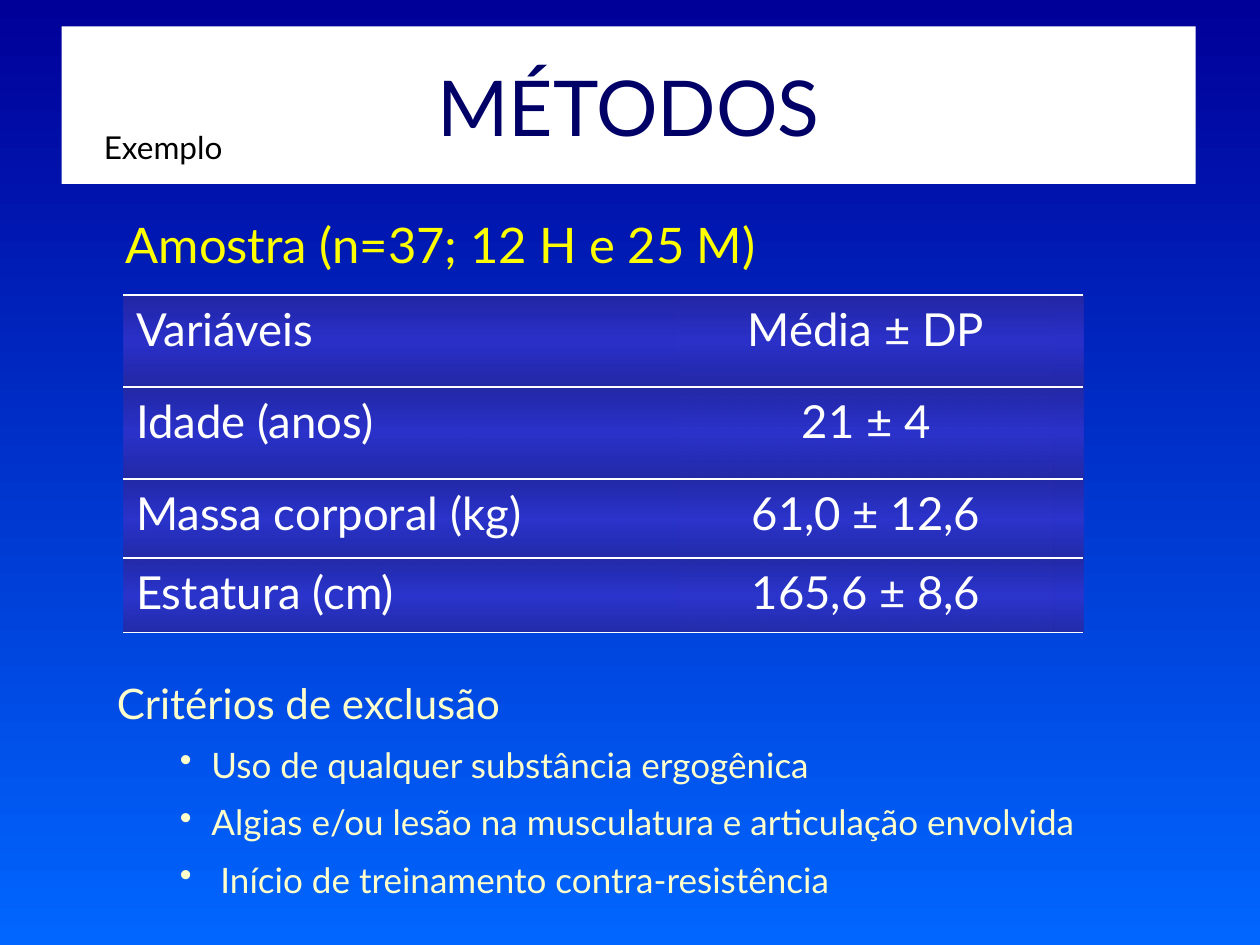
from lxml import etree
from pptx import Presentation
from pptx.dml.color import RGBColor
from pptx.enum.shapes import MSO_SHAPE
from pptx.enum.text import MSO_ANCHOR, PP_ALIGN
from pptx.oxml import parse_xml
from pptx.oxml.ns import nsdecls, qn
from pptx.util import Inches, Pt

RECTANGLE = MSO_SHAPE.RECTANGLE
TOP, MIDDLE = MSO_ANCHOR.TOP, MSO_ANCHOR.MIDDLE
LEFT, CENTER = PP_ALIGN.LEFT, PP_ALIGN.CENTER
FONT = "Lato"
COLORS = {
    "sky_top": "000099", "sky_bottom": "0066FF", "white": "FFFFFF",
    "navy": "000066", "yellow": "FFFF00", "cream": "FFFFCC",
    "black": "000000", "cell_edge": "2828A0", "cell_middle": "3333CC",
}
CELL_STOPS = [(0, "cell_edge", 86), (50, "cell_middle", 84), (100, "cell_edge", 86)]
COLUMN_WIDTHS = [4.41, 2.97, 0.23]
ROW_HEIGHTS = [0.73, 0.73, 0.63, 0.59]
SAMPLE = [
    ("Variáveis", "Média ± DP"),
    ("Idade (anos)", "21 ± 4"),
    ("Massa corporal (kg)", "61,0 ± 12,6"),
    ("Estatura (cm)", "165,6 ± 8,6"),
]
EXCLUSIONS = [
    "Uso de qualquer substância ergogênica",
    "Algias e/ou lesão na musculatura e articulação envolvida",
    " Início de treinamento contra-resistência",
]


def rgb(name):
    return RGBColor.from_string(COLORS[name])


def write(paragraph, text, size, color, align=LEFT, space=0, line_spacing=1.0):
    """Fill a paragraph; space is the gap before it as a share of the text size."""
    paragraph.text = text
    paragraph.font.name = FONT
    paragraph.font.size = Pt(size)
    paragraph.font.color.rgb = rgb(color)
    paragraph.alignment = align
    paragraph.space_before = Pt(size * space)
    paragraph.line_spacing = line_spacing


def indent(paragraph, margin, hanging, bullet=None):
    properties = paragraph._p.get_or_add_pPr()
    properties.set("marL", str(Inches(margin)))
    properties.set("indent", str(-Inches(hanging)))
    if bullet:
        etree.SubElement(properties, qn("a:buChar")).set("char", bullet)
        # Bullets must precede the default run properties
        defaults = properties.find(qn("a:defRPr"))
        if defaults is not None:
            properties.append(defaults)


def paint_background(slide):
    fill = slide.background.fill
    fill.gradient()
    fill.gradient_angle = 270
    for stop, name in zip(fill.gradient_stops, ("sky_top", "sky_bottom")):
        stop.color.rgb = rgb(name)


def add_text_box(slide, left, top, width, height, anchor=TOP):
    box = slide.shapes.add_textbox(*map(Inches, (left, top, width, height)))
    frame = box.text_frame
    frame.word_wrap = True
    frame.vertical_anchor = anchor
    return frame


def add_banner(slide, text):
    shape = slide.shapes.add_shape(
        RECTANGLE, Inches(0.49), Inches(0.21), Inches(9), Inches(1.25))
    shape.shadow.inherit = False
    shape.fill.solid()
    shape.fill.fore_color.rgb = rgb("white")
    shape.line.fill.background()
    shape.text_frame.vertical_anchor = MIDDLE
    write(shape.text_frame.paragraphs[0], text, 44, "navy", CENTER)


def style_cell(cell):
    """Give a cell white rules above and below and a translucent gradient."""
    properties = cell._tc.get_or_add_tcPr()
    for side in ("lnL", "lnR"):
        properties.append(parse_xml(
            f'<a:{side} {nsdecls("a")} w="0"><a:noFill/></a:{side}>'))
    for side in ("lnT", "lnB"):
        properties.append(parse_xml(
            f'<a:{side} {nsdecls("a")} w="{Pt(1)}"><a:solidFill>'
            f'<a:srgbClr val="{COLORS["white"]}"/></a:solidFill></a:{side}>'))
    stops = "".join(
        f'<a:gs pos="{position * 1000}"><a:srgbClr val="{COLORS[name]}">'
        f'<a:alpha val="{alpha * 1000}"/></a:srgbClr></a:gs>'
        for position, name, alpha in CELL_STOPS)
    properties.append(parse_xml(
        f'<a:gradFill {nsdecls("a")}><a:gsLst>{stops}</a:gsLst>'
        f'<a:lin ang="5400000" scaled="1"/></a:gradFill>'))


def add_sample_table(slide):
    frame = slide.shapes.add_table(
        len(ROW_HEIGHTS), len(COLUMN_WIDTHS), Inches(0.98), Inches(2.34),
        Inches(sum(COLUMN_WIDTHS)), Inches(sum(ROW_HEIGHTS)))
    table = frame.table
    table.first_row = table.horz_banding = False
    for column, width in zip(table.columns, COLUMN_WIDTHS):
        column.width = Inches(width)
    for row, height, texts in zip(table.rows, ROW_HEIGHTS, SAMPLE):
        row.height = Inches(height)
        for cell in row.cells:
            style_cell(cell)
        for cell, text, align in zip(row.cells, texts, (LEFT, CENTER)):
            write(cell.text_frame.paragraphs[0], text, 26, "white", align, 0.2)


def add_exclusion_list(slide):
    frame = add_text_box(slide, 0.33, 5.25, 9.17, 2.13)
    heading = frame.paragraphs[0]
    write(heading, "Critérios de exclusão", 24, "cream", space=0.2, line_spacing=1.2)
    indent(heading, 0.81, 0.31)
    for text in EXCLUSIONS:
        paragraph = frame.add_paragraph()
        write(paragraph, text, 20, "cream", space=0.2, line_spacing=1.2)
        indent(paragraph, 1.25, 0.25, "•")


def main():
    presentation = Presentation()
    presentation.slide_width = Inches(10)
    presentation.slide_height = Inches(7.5)
    slide = presentation.slides.add_slide(presentation.slide_layouts[6])

    paint_background(slide)
    subtitle = add_text_box(slide, 0.9, 1.55, 7.24, 0.77, MIDDLE)
    write(subtitle.paragraphs[0], "Amostra (n=37; 12 H e 25 M)", 28, "yellow")
    add_sample_table(slide)
    add_banner(slide, "MÉTODOS")
    add_exclusion_list(slide)
    label = add_text_box(slide, 0.43, 0.91, 1.73, 0.46)
    write(label.paragraphs[0], "Exemplo", 18, "black", CENTER, 0.5, 1.2)

    presentation.save("out.pptx")


if __name__ == "__main__":
    main()
